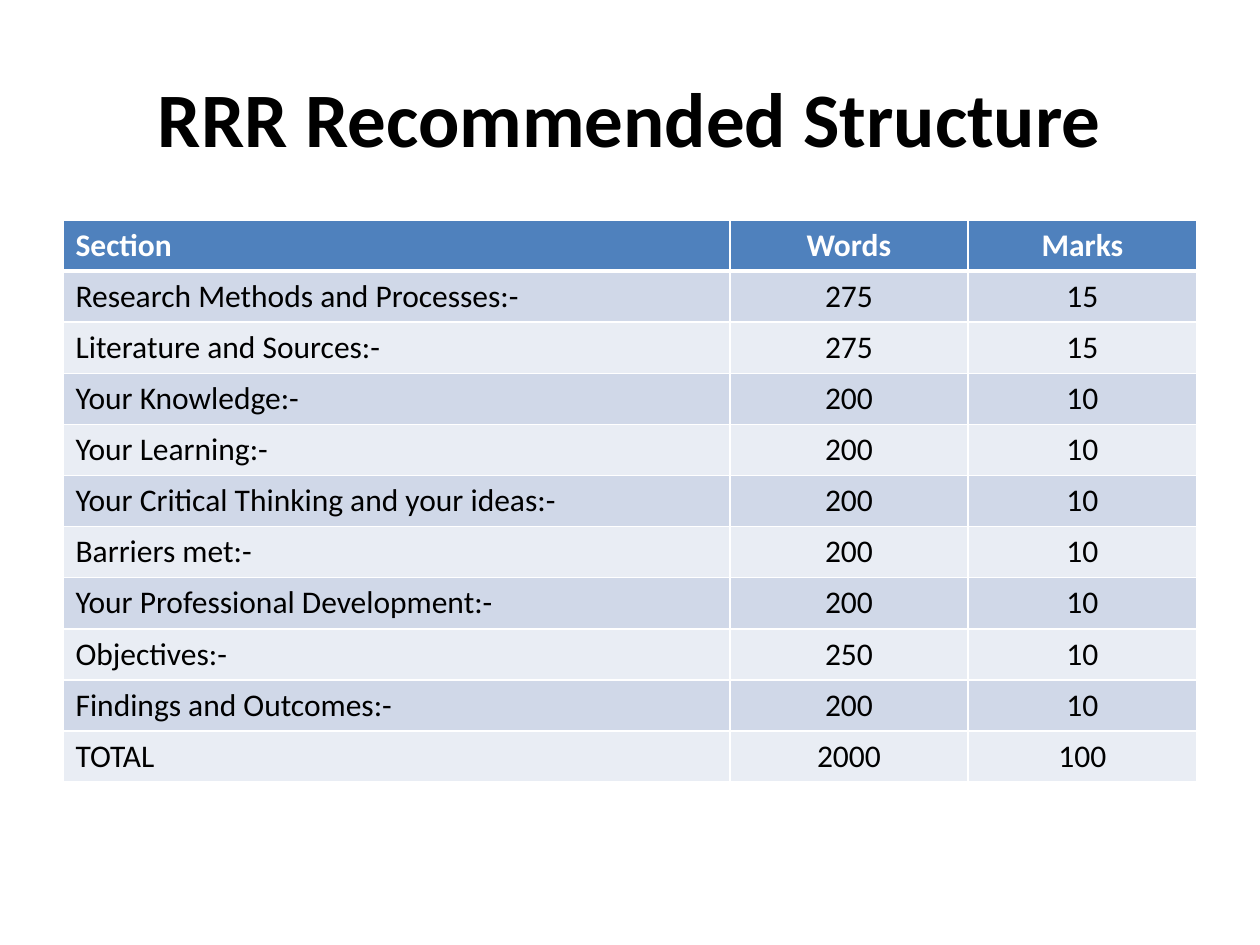
"""Build the slide with the recommended structure table."""
from lxml import etree
from pptx import Presentation
from pptx import util as u
from pptx.dml.color import RGBColor
from pptx.enum import text
from pptx.oxml import ns

BLACK = RGBColor(0x00, 0x00, 0x00)
WHITE = RGBColor(0xFF, 0xFF, 0xFF)
BLUE = RGBColor(0x4F, 0x81, 0xBD)
DARK = RGBColor(0xD0, 0xD8, 0xE8)
LIGHT = RGBColor(0xE9, 0xED, 0xF4)

ROWS = [
    ("Section", "Words", "Marks"),
    ("Research Methods and Processes:-", "275", "15"),
    ("Literature and Sources:-", "275", "15"),
    ("Your Knowledge:-", "200", "10"),
    ("Your Learning:-", "200", "10"),
    ("Your Critical Thinking and your ideas:-", "200", "10"),
    ("Barriers met:-", "200", "10"),
    ("Your Professional Development:-", "200", "10"),
    ("Objectives:-", "250", "10"),
    ("Findings and Outcomes:-", "200", "10"),
    ("TOTAL", "2000", "100"),
]


class Deck:
    font = "Calibri"
    scale = u.Inches(1) / 126

    def __init__(self, wide, high):
        self.prs = Presentation()
        self.prs.slide_width = self.px(wide)
        self.prs.slide_height = self.px(high)
        self.slide = self.prs.slides.add_slide(self.prs.slide_layouts[5])

    def px(self, n):
        return u.Emu(round(n * self.scale))

    def label(self, frame, words, size, color, bold, align):
        frame.text = words
        para = frame.paragraphs[0]
        para.alignment = align
        font = para.font
        font.name, font.size, font.bold = self.font, u.Pt(size), bold
        font.color.rgb = color

    def title(self, words, x, y, w, h):
        shape = self.slide.shapes.title
        shape.left, shape.top, shape.width, shape.height = map(self.px, (x, y, w, h))
        shape.text_frame.vertical_anchor = text.MSO_ANCHOR.MIDDLE
        self.label(shape.text_frame, words, 44, BLACK, True, text.PP_ALIGN.CENTER)

    def edge(self, cell, side, width):
        props = cell._tc.get_or_add_tcPr()
        line = etree.SubElement(props, ns.qn("a:ln" + side), w=str(u.Pt(width)))
        fill = etree.SubElement(line, ns.qn("a:solidFill"))
        etree.SubElement(fill, ns.qn("a:srgbClr"), val=str(WHITE))

    def cell(self, cell, words, row, col):
        head = row == 0
        for side in "LRTB":
            thick = (row, side) in ((0, "B"), (1, "T"))
            self.edge(cell, side, 3 if thick else 1)
        cell.fill.solid()
        cell.fill.fore_color.rgb = BLUE if head else (LIGHT, DARK)[row % 2]
        align = text.PP_ALIGN.CENTER if col else text.PP_ALIGN.LEFT
        self.label(cell.text_frame, words, 18, WHITE if head else BLACK, head, align)

    def table(self, rows, x, y, widths, high):
        box = map(self.px, (x, y, sum(widths), high * len(rows)))
        table = self.slide.shapes.add_table(len(rows), len(widths), *box).table
        for col, width in zip(table.columns, widths):
            col.width = self.px(width)
        for r, row in enumerate(rows):
            table.rows[r].height = self.px(high)
            for c, words in enumerate(row):
                self.cell(table.cell(r, c), words, r, c)


def main():
    deck = Deck(1260, 945)
    deck.title("RRR Recommended Structure", 63, 38, 1134, 157)
    deck.table(ROWS, 63, 220, (667, 238, 229), 51)
    deck.prs.save("out.pptx")


if __name__ == "__main__":
    main()
